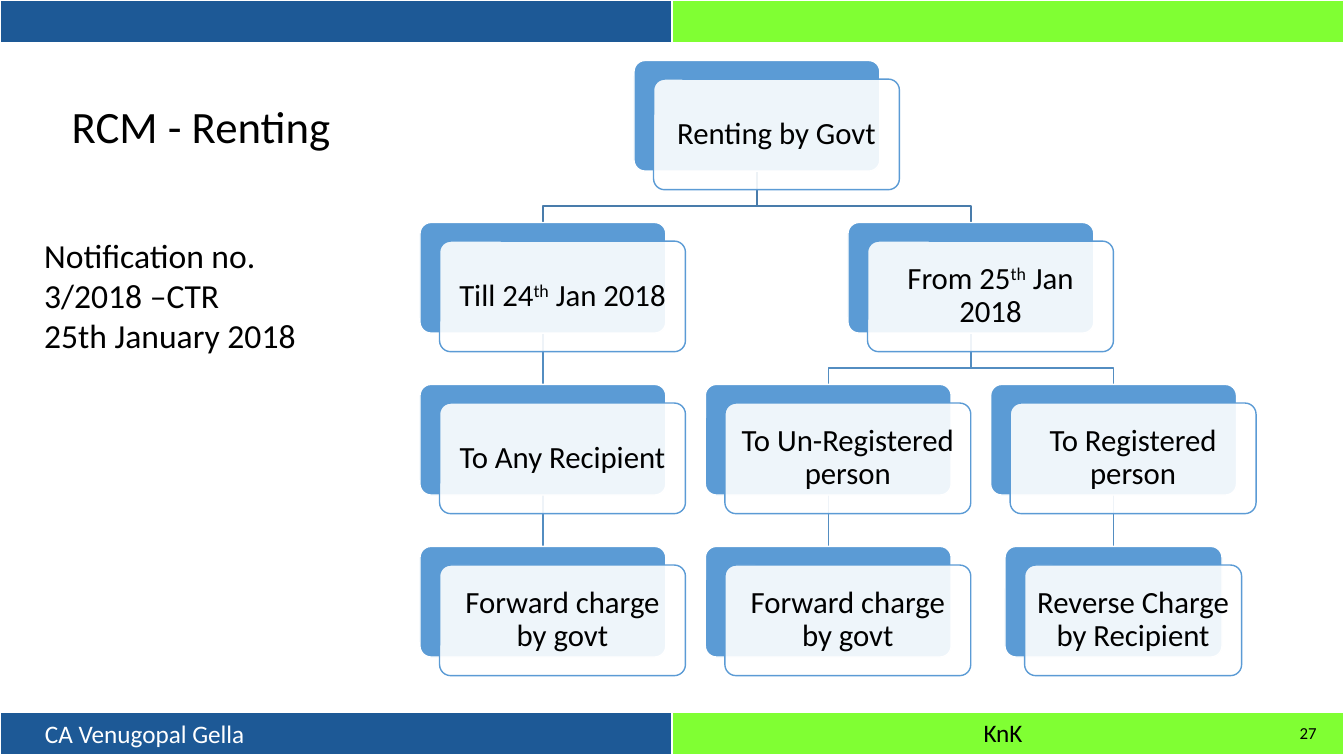
import pptx
import pptx.dml.color
import pptx.enum.shapes
import pptx.enum.text
import pptx.oxml
import pptx.oxml.ns
import pptx.util

Pt = pptx.util.Pt
ALIGN = pptx.enum.text.PP_ALIGN
ANCHOR = pptx.enum.text.MSO_ANCHOR
NAVY, LIME, BLUE, WHITE, BLACK = "1D5996", "80FF33", "5B9BD5", "FFFFFF", "000000"
NODE_HEIGHT, ROW_STEP, FIRST_ROW = 79, 115.7, 43.2
SHIFT_X, SHIFT_Y = 14, 13.3


def colour(hex_string):
    return pptx.dml.color.RGBColor.from_string(hex_string)


class Deck:
    """Holds the style and the current slide, and draws its elements in points."""

    font = "Calibri"

    def __init__(self, width, height):
        self.presentation = pptx.Presentation()
        self.presentation.slide_width = Pt(width)
        self.presentation.slide_height = Pt(height)
        self.slide = self.presentation.slides.add_slide(self.presentation.slide_layouts[5])

    def add_words(self, frame, paragraphs, size, ink=BLACK, align=ALIGN.LEFT, anchor=ANCHOR.TOP, wrap=True):
        frame.word_wrap = wrap
        frame.auto_size = pptx.enum.text.MSO_AUTO_SIZE.NONE
        frame.vertical_anchor = anchor
        for index, pieces in enumerate(paragraphs):
            paragraph = frame.add_paragraph() if index else frame.paragraphs[0]
            paragraph.alignment = align
            for piece in pieces:
                run = paragraph.add_run()
                run.text = piece
                run.font.name = self.font
                run.font.size = Pt(size)
                run.font.color.rgb = colour(ink)
                if piece == "th":
                    run.font._element.set("baseline", "30000")

    def title(self, box, text, size):
        heading = self.slide.shapes.title
        heading.left, heading.top, heading.width, heading.height = map(Pt, box)
        self.add_words(heading.text_frame, [[text]], size)
        heading.text_frame.paragraphs[0].line_spacing = 1.0

    def text(self, box, paragraphs, size, **style):
        label = self.slide.shapes.add_textbox(*map(Pt, box))
        self.add_words(label.text_frame, paragraphs, size, **style)

    def band(self, box, fills):
        table = self.slide.shapes.add_table(1, len(fills), *map(Pt, box)).table
        table.first_row = table.horz_banding = False
        for cell, fill in zip(table.iter_cells(), fills):
            properties = cell._tc.get_or_add_tcPr()
            for side, weight in (("L", 1), ("R", 1), ("T", 1), ("B", 3)):
                properties.append(pptx.oxml.parse_xml(
                    f'<a:ln{side} {pptx.oxml.ns.nsdecls("a")} w="{Pt(weight)}"><a:solidFill>'
                    f'<a:srgbClr val="{WHITE}"/></a:solidFill></a:ln{side}>'))
            cell.fill.solid()
            cell.fill.fore_color.rgb = colour(fill)

    def link(self, parent, child, ink):
        start, end = parent.foot, child.head
        if start[0] == end[0]:
            line = self.slide.shapes.add_connector(
                pptx.enum.shapes.MSO_CONNECTOR.STRAIGHT, *map(Pt, start + end))
            line._element.spPr.append(pptx.oxml.parse_xml(
                f'<a:effectLst {pptx.oxml.ns.nsdecls("a")}/>'))
        else:
            bend = start[1] + 25
            corners = [(start[0], bend), (end[0], bend), end]
            builder = self.slide.shapes.build_freeform(*map(Pt, start))
            builder.add_line_segments([tuple(map(Pt, corner)) for corner in corners], close=False)
            line = builder.convert_to_shape()
            line.shadow.inherit = False
            line.fill.background()
        line.line.color.rgb = colour(ink)
        line.line.width = Pt(1)

    def card(self, box, fill, edge, alpha=None):
        card = self.slide.shapes.add_shape(
            pptx.enum.shapes.MSO_SHAPE.ROUNDED_RECTANGLE, *map(Pt, box))
        card.adjustments[0] = 0.1
        card.shadow.inherit = False
        card.fill.solid()
        card.fill.fore_color.rgb = colour(fill)
        card.line.color.rgb = colour(edge)
        card.line.width = Pt(1)
        if alpha:
            tint = card._element.spPr.find(".//" + pptx.oxml.ns.qn("a:srgbClr"))
            tint.append(pptx.oxml.parse_xml(
                f'<a:alpha {pptx.oxml.ns.nsdecls("a")} val="{alpha * 1000}"/>'))
        return card

    def node(self, node):
        left, top = node.centre - node.width / 2, node.top
        self.card((left, top, node.width, NODE_HEIGHT), BLUE, WHITE)
        front = self.card((left + SHIFT_X, top + SHIFT_Y, node.width, NODE_HEIGHT), WHITE, BLUE, 90)
        frame = front.text_frame
        frame.margin_left = frame.margin_right = frame.margin_top = frame.margin_bottom = Pt(6.6)
        self.add_words(frame, [node.pieces], 22, align=ALIGN.CENTER, anchor=ANCHOR.MIDDLE)
        frame.paragraphs[0].line_spacing = 0.9


class Node:
    """One box of the tree, centred over its children."""

    def __init__(self, pieces, children=(), column=0, width=175.6):
        self.pieces, self.children, self.width = pieces, children, width
        self.centre = 387.8 + 203.8 * column
        if children:
            self.centre = (children[0].centre + children[-1].centre) / 2

    def place(self, level=0):
        self.top = FIRST_ROW + ROW_STEP * level
        self.head = (self.centre, self.top)
        self.foot = (self.centre, self.top + NODE_HEIGHT)
        self.level = level
        for child in self.children:
            child.place(level + 1)

    def descend(self):
        yield self
        for child in self.children:
            yield from child.descend()


def main():
    deck = Deck(960, 540)
    for band_top in (509, 0):
        deck.band((0, band_top, 960, 31), (NAVY, LIME))
    deck.text((25, 509.5, 159, 29), [["CA Venugopal Gella"]], 18, ink=WHITE, wrap=False)
    deck.text((695.5, 509, 45, 29), [["KnK"]], 18, wrap=False)

    any_recipient = Node(["To Any Recipient"], [Node(["Forward charge by govt"], column=0)])
    unregistered = Node(["To Un-Registered person"], [Node(["Forward charge by govt"], column=1)])
    registered = Node(["To Registered person"],
                      [Node(["Reverse Charge by Recipient"], column=2, width=155)])
    renting = Node(["Renting by Govt"], [
        Node(["Till 24", "th", " Jan 2018"], [any_recipient]),
        Node(["From 25", "th", " Jan 2018"], [unregistered, registered])])
    renting.place()
    for parent in renting.descend():
        for child in parent.children:
            deck.link(parent, child, "538DC1" if parent.level else "497CAB")
    for node in renting.descend():
        deck.node(node)

    deck.title((44, 67, 207, 46), "RCM - Renting", 32)
    deck.text((24.5, 164, 207, 94), [["Notification no. 3/2018 –CTR"], ["25th January 2018"]], 24)
    deck.text((731.5, 509, 216, 29), [["27"]], 12, align=ALIGN.RIGHT, anchor=ANCHOR.MIDDLE)
    deck.presentation.save("out.pptx")


if __name__ == "__main__":
    main()
